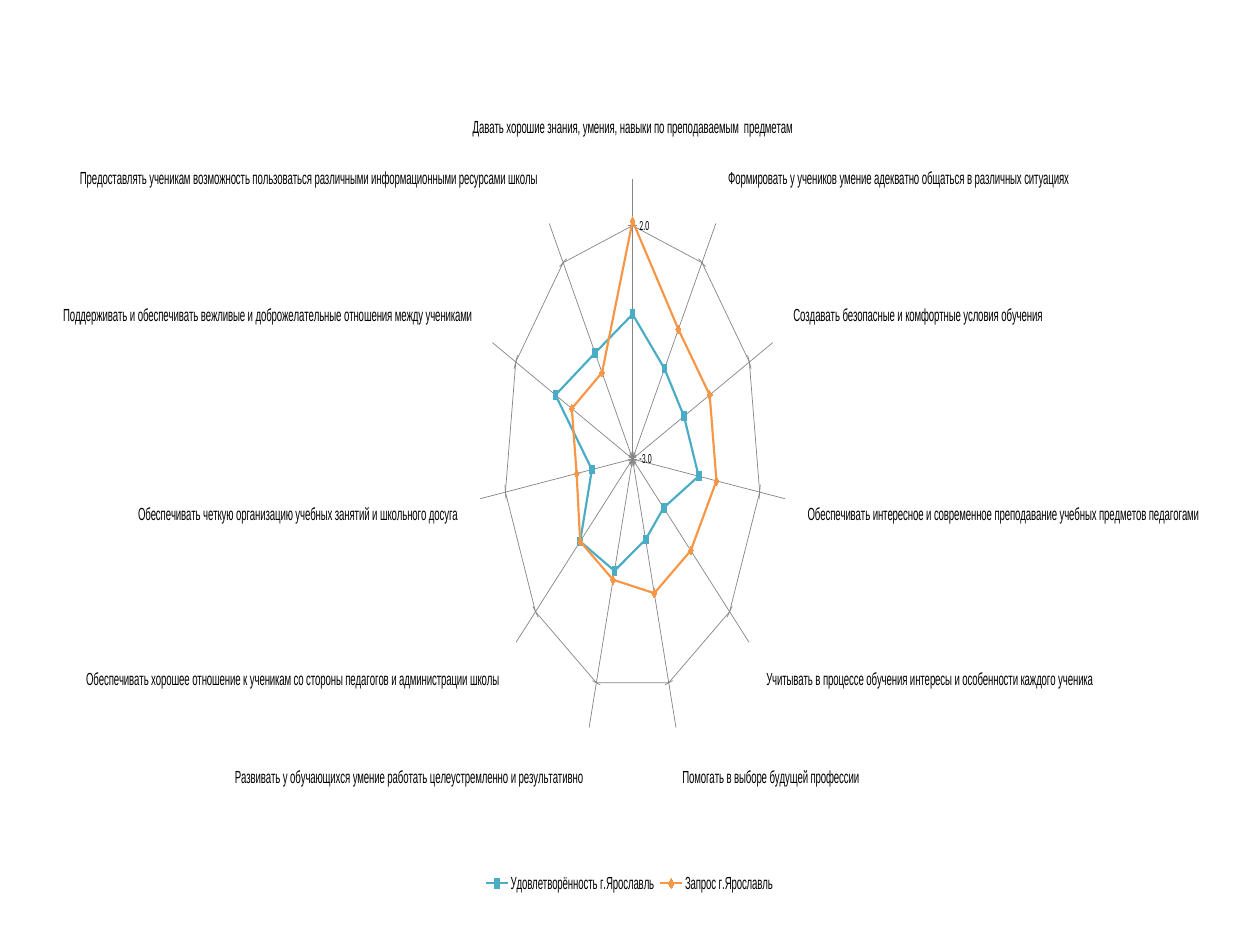
"""Build a slide with a radar chart of school satisfaction and demand."""
from lxml.etree import fromstring
from pptx import Presentation
from pptx.chart.data import CategoryChartData
from pptx.dml.color import RGBColor
from pptx.enum.chart import XL_CHART_TYPE as ChartType
from pptx.enum.chart import XL_LEGEND_POSITION as LegendPosition
from pptx.enum.chart import XL_TICK_MARK as TickMark
from pptx.util import Inches, Pt

BLACK = RGBColor(0x00, 0x00, 0x00)
GRAY = RGBColor(0x86, 0x86, 0x86)
TEAL = RGBColor(0x4B, 0xAC, 0xC6)
ORANGE = RGBColor(0xF7, 0x96, 0x46)

CATEGORIES = [
    "Давать хорошие знания, умения, навыки по преподаваемым  предметам",
    "Формировать у учеников умение адекватно общаться в различных ситуациях",
    "Создавать безопасные и комфортные условия обучения",
    "Обеспечивать интересное и современное преподавание учебных предметов педагогами",
    "Учитывать в процессе обучения интересы и особенности каждого ученика",
    "Помогать в выборе будущей профессии",
    "Развивать у обучающихся умение работать целеустремленно и результативно",
    "Обеспечивать хорошее отношение к ученикам со стороны педагогов и администрации школы",
    "Обеспечивать четкую организацию учебных занятий и школьного досуга",
    "Поддерживать и обеспечивать вежливые и доброжелательные отношения между учениками",
    "Предоставлять ученикам возможность пользоваться различными информационными ресурсами школы",
]
SERIES = [
    ("Удовлетворённость г.Ярославль", TEAL,
     [0.1, -0.7, -0.8, -0.4, -1.4, -1.2, -0.5, -0.3, -1.4, 0.3, -0.3]),
    ("Запрос г.Ярославль", ORANGE,
     [2.1, 0.3, 0.3, 0.3, 0, 0, -0.3, -0.3, -0.8, -0.4, -0.8]),
]
PLOT_AREA = {"x": 0.26, "y": 0.12, "w": 0.49, "h": 0.73}
CHART_NS = "http://schemas.openxmlformats.org/drawingml/2006/chart"


def style_font(font, size, name):
    font.size = Pt(size)
    font.name = name
    font.color.rgb = BLACK


def place_plot(chart):
    places = "".join(f'<c:{key} val="{value}"/>' for key, value in PLOT_AREA.items())
    layout = fromstring(
        f'<c:layout xmlns:c="{CHART_NS}"><c:manualLayout><c:layoutTarget val="inner"/>'
        f'<c:xMode val="edge"/><c:yMode val="edge"/>{places}</c:manualLayout></c:layout>')
    plot_area = chart.element.find(f".//{{{CHART_NS}}}plotArea")
    for old in plot_area.findall(f"{{{CHART_NS}}}layout"):
        plot_area.remove(old)
    plot_area.insert(0, layout)


def style_axes(chart):
    for axis, size, name in ((chart.category_axis, 10, "Arial"),
                             (chart.value_axis, 8, "Calibri")):
        style_font(axis.tick_labels.font, size, name)
        axis.has_major_gridlines = True
        for line in (axis.format.line, axis.major_gridlines.format.line):
            line.color.rgb = GRAY
            line.width = Pt(0.75)
    scale = chart.value_axis
    scale.minimum_scale, scale.maximum_scale, scale.major_unit = -3, 3, 5
    scale.major_tick_mark = TickMark.CROSS
    scale.tick_labels.number_format = "0.0"
    scale.tick_labels.number_format_is_linked = False


def style_series(chart):
    for series, (_, color, _) in zip(chart.plots[0].series, SERIES):
        series.smooth = False
        series.format.line.color.rgb = color
        series.format.line.width = Pt(2.25)
        marker = series.marker
        marker.size = 5
        marker.format.fill.solid()
        marker.format.fill.fore_color.rgb = color
        marker.format.line.color.rgb = color


def main():
    deck = Presentation()
    deck.slide_width, deck.slide_height = Inches(10), Inches(7.5)
    page = deck.slides.add_slide(deck.slide_layouts[6])

    data = CategoryChartData(number_format="0.0")
    data.categories = CATEGORIES
    for name, _, values in SERIES:
        data.add_series(name, values)
    chart = page.shapes.add_chart(
        ChartType.RADAR_MARKERS, Inches(0.5), Inches(0.36),
        Inches(9.07), Inches(6.77), data).chart

    style_font(chart.font, 10, "Calibri")
    chart.has_title = False
    chart.plots[0].vary_by_categories = False
    chart.has_legend = True
    chart.legend.position = LegendPosition.BOTTOM
    chart.legend.include_in_layout = False
    style_font(chart.legend.font, 10, "Arial")
    place_plot(chart)
    style_axes(chart)
    style_series(chart)
    deck.save("out.pptx")


if __name__ == "__main__":
    main()
